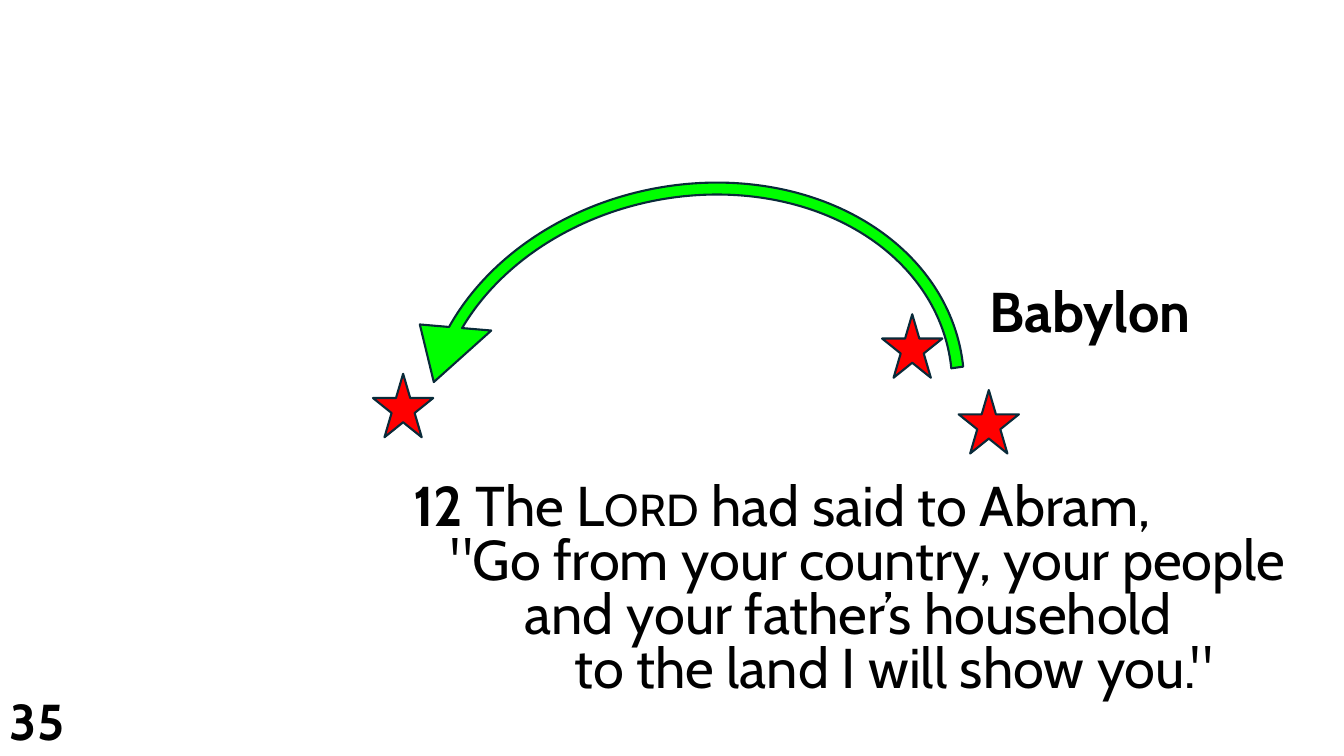
from dataclasses import dataclass

from lxml import etree
from pptx import Presentation
from pptx import util as u
from pptx.dml.color import RGBColor
from pptx.enum import shapes, text
from pptx.oxml import ns


@dataclass(frozen=True)
class Theme:
    font: str = "Cabin"
    ink: str = "000000"
    paper: str = "FFFFFF"
    outline: str = "092A39"
    city: str = "FF0000"
    route: str = "00FF00"
    body: int = 40
    number: int = 36
    small_caps: int = 32
    line_width: float = 1.5
    panel_alpha: int = 60


@dataclass(frozen=True)
class Box:
    left: float
    top: float
    width: float
    height: float

    def lengths(self) -> list:
        return [u.Cm(v) for v in (self.left, self.top, self.width, self.height)]


@dataclass(frozen=True)
class Run:
    text: str
    size: int
    bold: bool = False


@dataclass(frozen=True)
class Line:
    runs: tuple
    spaces: int = 0
    spacing: float = 0.8
    after: int = 0


THEME = Theme()
SPACE_WIDTH = 0.313
STAR_SIZE = (1.52, 1.6)
STARS = [(24.16, 9.83), (9.4, 9.42), (22.23, 7.92)]
ROUTE = Box(9.86, 3.91, 15.24, 12.55)
ROUTE_ADJUSTMENTS = (0.024, 7.786, 198.335, 105.786, 0.072)
ROUTE_ROTATION = 348.4

VERSE = [
    Line((
        Run("12\u00a0", THEME.body, True),
        Run("The L", THEME.body),
        Run("ORD", THEME.small_caps),
        Run(" had said to Abram,", THEME.body),
    )),
    Line((Run('"Go from your country, your people', THEME.body),), 3),
    Line((Run("and your father’s household", THEME.body),), 9),
    Line((Run('to the land I will show you."', THEME.body),), 13),
]


def add_filled(s, kind, box: Box, color: str):
    sp = s.shapes.add_shape(kind, *box.lengths())
    sp.shadow.inherit = False
    sp.fill.solid()
    sp.fill.fore_color.rgb = RGBColor.from_string(color)
    return sp


def add_marker(s, kind, box: Box, color: str):
    sp = add_filled(s, kind, box, color)
    sp.line.color.rgb = RGBColor.from_string(THEME.outline)
    sp.line.width = u.Pt(THEME.line_width)
    return sp


def add_route(s) -> None:
    sp = add_marker(s, shapes.MSO_SHAPE.CIRCULAR_ARROW, ROUTE, THEME.route)
    for i, value in enumerate(ROUTE_ADJUSTMENTS):
        sp.adjustments[i] = value
    sp.rotation = ROUTE_ROTATION
    sp._element.spPr.get_or_add_xfrm().set("flipH", "1")


def add_panel(s, box: Box):
    sp = add_filled(s, shapes.MSO_SHAPE.RECTANGLE, box, THEME.paper)
    sp.line.fill.background()
    color = sp._element.spPr.find(".//" + ns.qn("a:srgbClr"))
    alpha = etree.SubElement(color, ns.qn("a:alpha"))
    alpha.set("val", str(THEME.panel_alpha * 1000))
    return sp


def write(sp, lines: list, anchor=text.MSO_ANCHOR.TOP) -> None:
    tf = sp.text_frame
    frame_format = {"word_wrap": True, "vertical_anchor": anchor, "margin_right": 0}
    for name, value in frame_format.items():
        setattr(tf, name, value)
    for i, line in enumerate(lines):
        p = tf.add_paragraph() if i else tf.paragraphs[0]
        paragraph_format = {
            "alignment": text.PP_ALIGN.LEFT,
            "line_spacing": line.spacing,
            "space_after": u.Pt(line.after),
        }
        for name, value in paragraph_format.items():
            setattr(p, name, value)
        indent = u.Cm(line.spaces * SPACE_WIDTH)
        p._p.get_or_add_pPr().set("marL", str(int(indent)))
        for run in line.runs:
            r = p.add_run()
            r.text = run.text
            run_format = {"name": THEME.font, "size": u.Pt(run.size), "bold": run.bold}
            for name, value in run_format.items():
                setattr(r.font, name, value)
            r.font.color.rgb = RGBColor.from_string(THEME.ink)


def main() -> None:
    prs = Presentation()
    prs.slide_width, prs.slide_height = u.Cm(33.87), u.Cm(19.05)
    s = prs.slides.add_slide(prs.slide_layouts[6])

    add_route(s)
    for left, top in STARS:
        add_marker(s, shapes.MSO_SHAPE.STAR_5_POINT, Box(left, top, *STAR_SIZE), THEME.city)

    write(add_panel(s, Box(10.16, 12.07, 22.53, 5.79)), VERSE)

    number = s.shapes.add_textbox(*Box(0, 17.15, 4.39, 1.9).lengths())
    write(
        number,
        [Line((Run("35", THEME.number, True),), spacing=0.9, after=18)],
        text.MSO_ANCHOR.BOTTOM,
    )

    city = s.shapes.add_textbox(*Box(24.69, 7.16, 9.12, 1.68).lengths())
    write(city, [Line((Run("Babylon", THEME.body, True),))])

    prs.save("out.pptx")


if __name__ == "__main__":
    main()
